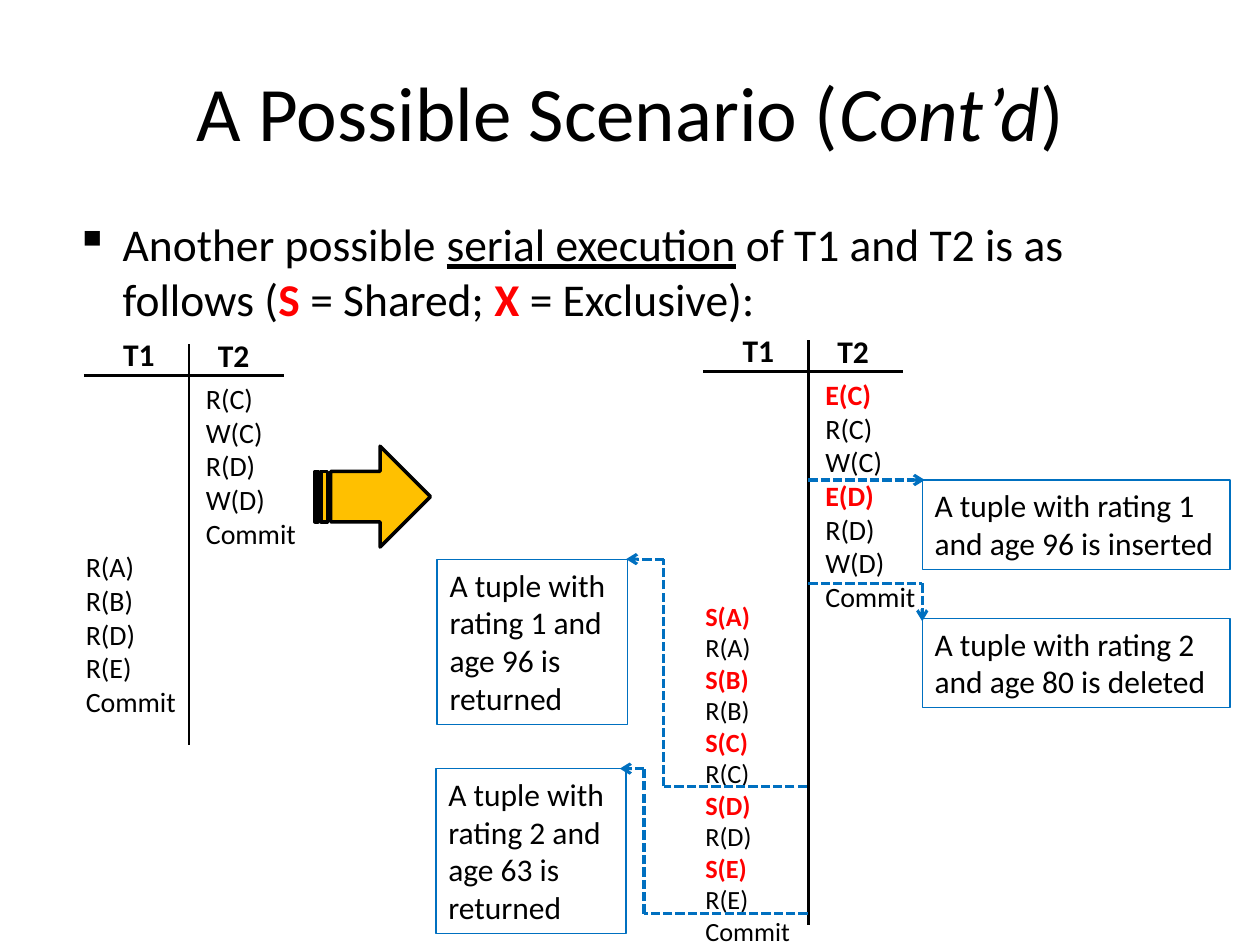
"""Build a slide comparing a serial schedule with its locking version."""
from dataclasses import dataclass
from itertools import pairwise

from lxml.etree import SubElement
from pptx import Presentation
from pptx.dml.color import RGBColor
from pptx.enum.dml import MSO_LINE
from pptx.enum.shapes import MSO_CONNECTOR, MSO_SHAPE
from pptx.enum.text import MSO_ANCHOR, PP_ALIGN
from pptx.oxml.ns import qn
from pptx.util import Pt

FONT = "Calibri"
COLORS = {"ink": "000000", "lock": "FF0000", "callout": "0070C0", "arrow": "FFC000"}


@dataclass
class Schedule:
    center: float
    rule: float
    bottom: float
    first: list[str]
    first_top: float
    first_size: float
    second: list[str]


@dataclass
class Callout:
    left: float
    top: float
    width: float
    height: float
    lines: list[str]


SCHEDULES = [
    Schedule(108, 214.6, 426, ["R(A)", "R(B)", "R(D)", "R(E)", "Commit"], 310.7, 16,
             ["R(C)", "W(C)", "R(D)", "W(D)", "Commit"]),
    Schedule(462, 212.4, 528.5,
             ["S(A)", "R(A)", "S(B)", "R(B)", "S(C)", "R(C)", "S(D)", "R(D)",
              "S(E)", "R(E)", "Commit"], 339.2, 15,
             ["E(C)", "R(C)", "W(C)", "E(D)", "R(D)", "W(D)", "Commit"]),
]
CALLOUTS = [
    Callout(249.8, 319.7, 108.7, 94.3,
            ["A tuple with", "rating 1 and", "age 96 is", "returned"]),
    Callout(249.1, 439.2, 108.7, 94.3,
            ["A tuple with", "rating 2 and", "age 63 is", "returned"]),
    Callout(527, 274.3, 175.9, 51,
            ["A tuple with rating 1", "and age 96 is inserted"]),
    Callout(527, 353.4, 175.9, 51,
            ["A tuple with rating 2", "and age 80 is deleted"]),
]
ROUTES = [
    [(462, 274.3), (528.5, 274.3)],
    [(462, 333.4), (527, 333.4), (527, 355)],
    [(461, 449.3), (379.4, 449.3), (379.4, 319.5), (357.8, 319.5)],
    [(461.5, 522), (368, 522), (368, 439.2), (354.2, 439.2)],
]


def color(name: str) -> RGBColor:
    """Return a named colour."""
    return RGBColor.from_string(COLORS[name])


def add_span(para, text: str, *, size: float, ink: str = "ink", bold: bool = False,
             italic: bool = False, underline: bool = False) -> None:
    """Append formatted text to a paragraph."""
    span = para.add_run()
    span.text = text
    font = span.font
    font.name, font.size = FONT, Pt(size)
    font.bold, font.italic, font.underline = bold, italic, underline
    font.color.rgb = color(ink)


def write_lines(frame, lines: list[str], size: float, bold: bool = False) -> None:
    """Write one paragraph per line, with lock requests in red."""
    frame.word_wrap = False
    frame.vertical_anchor = MSO_ANCHOR.TOP
    for index, line in enumerate(lines):
        para = frame.add_paragraph() if index else frame.paragraphs[0]
        para.alignment = PP_ALIGN.LEFT
        lock = line.startswith(("S(", "E("))
        add_span(para, line, size=size, ink="lock" if lock else "ink", bold=bold or lock)


def add_lines(page, left: float, top: float, width: float, lines: list[str],
              size: float, bold: bool = False) -> None:
    """Place a text box that is just high enough for its lines."""
    height = len(lines) * size * 1.22 + 7.2
    box = page.shapes.add_textbox(Pt(left), Pt(top), Pt(width), Pt(height))
    write_lines(box.text_frame, lines, size, bold)


def add_line(page, start: tuple, end: tuple, ink: str = "ink", width: float = 1.5,
             dashed: bool = False, arrow: bool = False) -> None:
    """Draw a straight line between two points."""
    line = page.shapes.add_connector(
        MSO_CONNECTOR.STRAIGHT, *(Pt(value) for value in (*start, *end)))
    line.line.color.rgb = color(ink)
    line.line.width = Pt(width)
    if dashed:
        line.line.dash_style = MSO_LINE.SQUARE_DOT
    if arrow:
        SubElement(line.line._get_or_add_ln(), qn("a:tailEnd"), type="arrow")
    SubElement(line._element.spPr, qn("a:effectLst"))


def add_schedule(page, plan: Schedule) -> None:
    """Draw the two columns of a schedule."""
    center, rule = plan.center, plan.rule
    add_line(page, (center, rule - 18), (center, plan.bottom))
    add_line(page, (center - 60, rule), (center + 54, rule))
    add_lines(page, center - 44.8, rule - 26.6, 32.4, ["T1"], 18, bold=True)
    add_lines(page, center + 9.4, rule - 26, 32.4, ["T2"], 18, bold=True)
    add_lines(page, center - 66, plan.first_top, 66, plan.first, plan.first_size)
    add_lines(page, center + 2.6, rule, 66, plan.second, 16)


def add_callout(page, note: Callout) -> None:
    """Draw an outlined remark."""
    box = page.shapes.add_shape(MSO_SHAPE.RECTANGLE, Pt(note.left), Pt(note.top),
                                Pt(note.width), Pt(note.height))
    box.shadow.inherit = False
    box.fill.background()
    box.line.color.rgb = color("callout")
    box.line.width = Pt(0.75)
    write_lines(box.text_frame, note.lines, 18)


def add_route(page, points: list[tuple]) -> None:
    """Draw a dashed path that ends in an arrowhead."""
    for start, end in pairwise(points):
        add_line(page, start, end, "callout", 1.75, dashed=True, arrow=end == points[-1])


def add_heading(page) -> None:
    """Write the title and the bulleted introduction."""
    title = page.shapes.title
    title.left, title.top, title.width, title.height = Pt(36), Pt(18), Pt(648), Pt(90)
    title.text_frame.vertical_anchor = MSO_ANCHOR.MIDDLE
    para = title.text_frame.paragraphs[0]
    para.alignment = PP_ALIGN.CENTER
    add_span(para, "A Possible Scenario (", size=44)
    add_span(para, "Cont’d", size=44, italic=True)
    add_span(para, ")", size=44)

    box = page.shapes.add_textbox(Pt(36), Pt(120.2), Pt(648), Pt(72))
    box.text_frame.word_wrap = True
    para = box.text_frame.paragraphs[0]
    layout = para._p.get_or_add_pPr()
    layout.set("marL", str(Pt(27)))
    layout.set("indent", str(Pt(-27)))
    SubElement(layout, qn("a:buChar"), char="▪")
    add_span(para, "Another possible ", size=26)
    add_span(para, "serial execution", size=26, underline=True)
    add_span(para, " of T1 and T2 is as follows (", size=26)
    add_span(para, "S", size=26, ink="lock", bold=True)
    add_span(para, " = Shared; ", size=26)
    add_span(para, "X", size=26, ink="lock", bold=True)
    add_span(para, " = Exclusive):", size=26)


def add_step_arrow(page) -> None:
    """Draw the arrow between the schedules."""
    arrow = page.shapes.add_shape(MSO_SHAPE.STRIPED_RIGHT_ARROW,
                                  Pt(180), Pt(255), Pt(66), Pt(57.6))
    arrow.shadow.inherit = False
    arrow.fill.solid()
    arrow.fill.fore_color.rgb = color("arrow")
    arrow.line.color.rgb = color("ink")
    arrow.line.width = Pt(2)


def main() -> None:
    """Build and save the deck."""
    deck = Presentation()
    deck.slide_width, deck.slide_height = Pt(720), Pt(540)
    page = deck.slides.add_slide(deck.slide_layouts.get_by_name("Title Only"))
    add_heading(page)
    for plan in SCHEDULES:
        add_schedule(page, plan)
    add_step_arrow(page)
    for note in CALLOUTS:
        add_callout(page, note)
    for points in ROUTES:
        add_route(page, points)
    deck.save("out.pptx")


if __name__ == "__main__":
    main()
